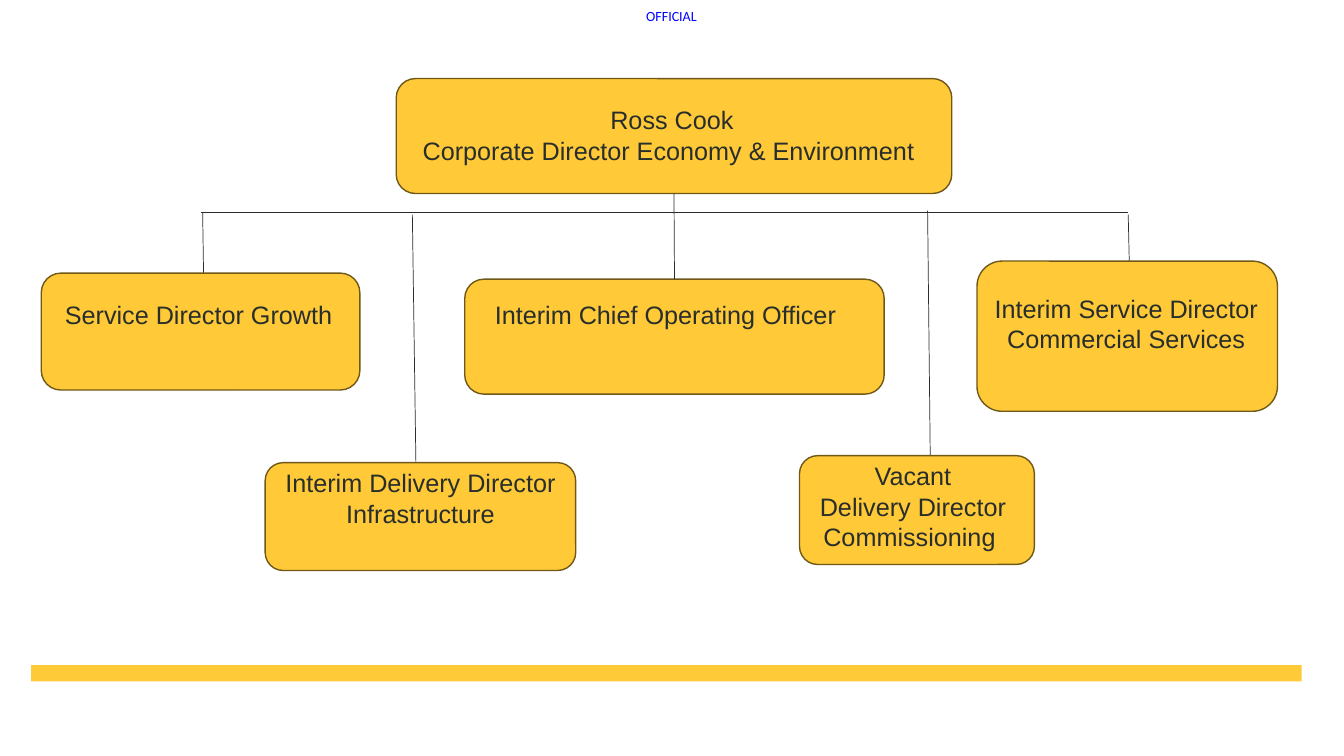
from lxml import etree
from pptx import Presentation
from pptx.dml.color import RGBColor
from pptx.enum import shapes, text
from pptx.oxml.ns import qn
from pptx.util import Inches, Pt

INK = "282E2B"
GOLD = "FFC937"
BAND = "FFCA38"
BROWN = "705818"
BLUE = "0000FF"

# (box, label area, lines of text)
DIRECTOR = ((3.93, 0.78, 5.51, 1.14), (3.93, 0.99, 5.47, 0.71),
            ["Ross Cook", "Corporate Director Economy & Environment "])
OPERATIONS = ((4.61, 2.77, 4.16, 1.14), (4.79, 2.92, 3.62, 0.4),
              ["Interim Chief Operating Officer"])
REPORTS = [
    ((0.41, 2.71, 3.16, 1.16), (0.29, 2.92, 3.36, 0.4),
     ["Service Director Growth"]),
    ((2.63, 4.59, 3.08, 1.07), (2.63, 4.59, 3.08, 0.71),
     ["Interim Delivery Director Infrastructure"]),
    ((9.69, 2.59, 2.98, 1.49), (9.49, 2.86, 3.36, 0.71),
     ["Interim Service Director Commercial Services"]),
    ((7.93, 4.52, 2.33, 1.08), (7.29, 4.52, 3.53, 1.31),
     ["Vacant", "Delivery Director Commissioning "]),
]
DROPS = [
    (9.2, 2.09, 9.23, 4.86),
    (4.09, 2.13, 4.13, 4.94),
    (11.19, 2.13, 11.22, 3.46),
    (2.01, 2.11, 2.03, 3.44),
]
CROSSBAR = (1.99, 2.11, 11.19, 2.11)


def colour(value):
    return RGBColor.from_string(value)


def add_block(page, preset, place, fill):
    block = page.shapes.add_shape(preset, *map(Inches, place))
    block.shadow.inherit = False
    block.fill.solid()
    block.fill.fore_color.rgb = colour(fill)
    block.line.fill.background()
    return block


def add_label(page, place, lines, font, size, ink, align=None):
    label = page.shapes.add_textbox(*map(Inches, place))
    frame = label.text_frame
    frame.word_wrap = True
    frame.text = "\n".join(lines)
    for para in frame.paragraphs:
        para.alignment = align
        for span in para.runs:
            span.font.name = font
            span.font.size = Pt(size)
            span.font.color.rgb = colour(ink)
    return label


def add_line(page, ends):
    line = page.shapes.add_connector(shapes.MSO_CONNECTOR.STRAIGHT, *map(Inches, ends))
    line.line.color.rgb = colour(INK)
    line.line.width = Pt(0.5)
    etree.SubElement(line._element.spPr, qn("a:effectLst"))
    return line


def add_post(page, place, label_place, lines):
    """Draw one post of the chart: a rounded box and its label."""
    block = add_block(page, shapes.MSO_SHAPE.ROUNDED_RECTANGLE, place, GOLD)
    block.line.color.rgb = colour(BROWN)
    block.line.width = Pt(1)
    add_label(page, label_place, lines, "Arial", 18, INK, text.PP_ALIGN.CENTER)
    return block


def add_frame(page):
    """Draw the marking at the top and the band at the foot."""
    add_block(page, shapes.MSO_SHAPE.RECTANGLE, (0.31, 6.6, 12.6, 0.16), BAND)
    marking = add_label(page, (6.41, 0.07, 0.53, 0.17), ["OFFICIAL"], "Calibri", 10, BLUE)
    frame = marking.text_frame
    frame.word_wrap = False
    frame.margin_left = frame.margin_right = frame.margin_top = frame.margin_bottom = 0


def add_organisation(page):
    for ends in DROPS:
        add_line(page, ends)
    director = add_post(page, *DIRECTOR)
    operations = add_post(page, *OPERATIONS)
    for report in REPORTS:
        add_post(page, *report)
    trunk = add_line(page, (6.69, 1.92, 6.69, 2.77))
    trunk.begin_connect(director, 2)
    trunk.end_connect(operations, 0)
    add_line(page, CROSSBAR)


def main():
    deck = Presentation()
    deck.slide_width = Inches(13.33)
    deck.slide_height = Inches(7.5)
    page = deck.slides.add_slide(deck.slide_layouts[6])
    add_frame(page)
    add_organisation(page)
    deck.save("out.pptx")


if __name__ == "__main__":
    main()
